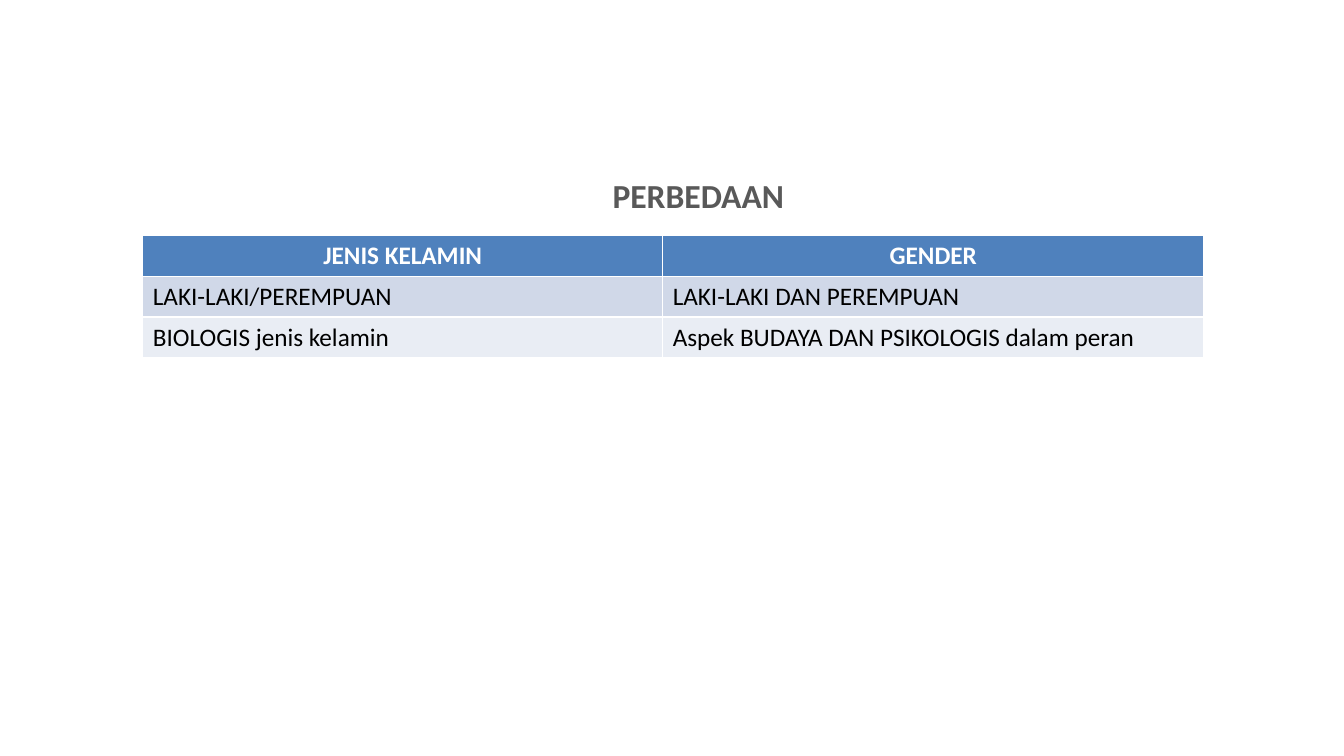
from dataclasses import dataclass

from pptx import Presentation
from pptx.dml.color import RGBColor
from pptx.enum.text import MSO_ANCHOR, PP_ALIGN
from pptx.slide import Slide
from pptx.table import Table
from pptx.text.text import TextFrame
from pptx.util import Cm, Pt


@dataclass(frozen=True)
class Theme:
    font: str = "Calibri"
    title_size: int = 24
    table_size: int = 18
    title_color: str = "595959"
    header_color: str = "FFFFFF"
    body_color: str = "000000"
    header_fill: str = "4F81BD"
    odd_fill: str = "D0D8E8"
    even_fill: str = "E9EDF4"


@dataclass(frozen=True)
class TextStyle:
    size: int
    color: str
    bold: bool
    align: PP_ALIGN


@dataclass(frozen=True)
class ComparisonRow:
    sex: str
    gender: str
    fill: str
    style: TextStyle


THEME = Theme()
TITLE = TextStyle(THEME.title_size, THEME.title_color, True, PP_ALIGN.CENTER)
HEADER = TextStyle(THEME.table_size, THEME.header_color, True, PP_ALIGN.CENTER)
BODY = TextStyle(THEME.table_size, THEME.body_color, False, PP_ALIGN.LEFT)

COMPARISON = [
    ComparisonRow("JENIS KELAMIN", "GENDER", THEME.header_fill, HEADER),
    ComparisonRow("LAKI-LAKI/PEREMPUAN", "LAKI-LAKI DAN PEREMPUAN", THEME.odd_fill, BODY),
    ComparisonRow(
        "BIOLOGIS jenis kelamin",
        "Aspek BUDAYA DAN PSIKOLOGIS dalam peran",
        THEME.even_fill,
        BODY,
    ),
]

LEFT = Cm(3.6)
COLUMN_WIDTHS = [Cm(13.1), Cm(13.64)]
ROW_HEIGHT = Cm(1.03)


def write_text(frame: TextFrame, text: str, style: TextStyle) -> None:
    paragraph = frame.paragraphs[0]
    paragraph.text = text
    paragraph.alignment = style.align
    paragraph.font.name = THEME.font
    paragraph.font.size = Pt(style.size)
    paragraph.font.bold = style.bold
    paragraph.font.color.rgb = RGBColor.from_string(style.color)


def add_title(slide: Slide, text: str) -> None:
    frame = slide.shapes.add_textbox(LEFT, Cm(4.32), Cm(28), Cm(1.19)).text_frame
    frame.word_wrap = True
    frame.vertical_anchor = MSO_ANCHOR.MIDDLE
    write_text(frame, text, TITLE)


def fill_row(table: Table, index: int, row: ComparisonRow) -> None:
    table.rows[index].height = ROW_HEIGHT
    for cell, text in zip(table.rows[index].cells, (row.sex, row.gender)):
        cell.fill.solid()
        cell.fill.fore_color.rgb = RGBColor.from_string(row.fill)
        write_text(cell.text_frame, text, row.style)


def add_comparison(slide: Slide, rows: list[ComparisonRow]) -> None:
    table = slide.shapes.add_table(
        len(rows), len(COLUMN_WIDTHS), LEFT, Cm(5.93),
        sum(COLUMN_WIDTHS), ROW_HEIGHT * len(rows),
    ).table
    for column, width in zip(table.columns, COLUMN_WIDTHS):
        column.width = width
    for index, row in enumerate(rows):
        fill_row(table, index, row)


def main() -> None:
    presentation = Presentation()
    presentation.slide_width = Cm(33.87)
    presentation.slide_height = Cm(19.05)
    slide = presentation.slides.add_slide(presentation.slide_layouts[6])
    add_title(slide, "PERBEDAAN")
    add_comparison(slide, COMPARISON)
    presentation.save("out.pptx")


if __name__ == "__main__":
    main()
